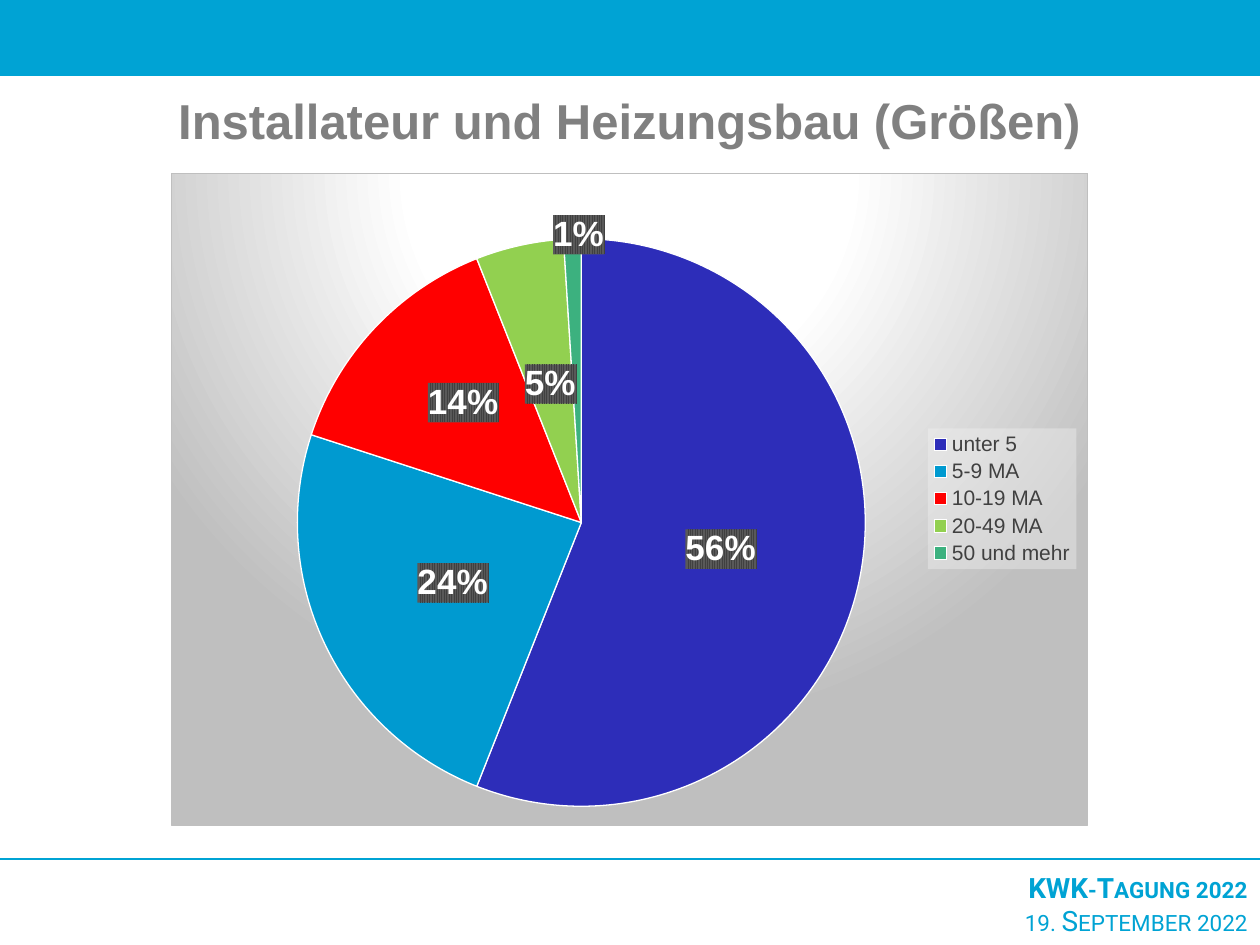
import copy

import lxml.etree
import pptx
import pptx.chart.data
import pptx.dml.color
import pptx.enum.chart
import pptx.enum.shapes
import pptx.enum.text
import pptx.oxml
import pptx.oxml.ns
import pptx.util

EMU_PER_PX = 914400 // 126
NAMESPACES = pptx.oxml.ns.nsdecls("c", "a")
CHART_WIDTH, CHART_HEIGHT = 917, 653

SLICES = [
    ("unter 5", 56, "2D2DB9"),
    ("5-9 MA", 24, "009AD0"),
    ("10-19 MA", 14, "FF0000"),
    ("20-49 MA", 5, "92D050"),
    ("50 und mehr", 1, "3CB17F"),
]
LABEL_OFFSETS = {2: (-15, -23), 4: (2, -146)}


def px(length):
    return pptx.util.Emu(length * EMU_PER_PX)


def color(value):
    return pptx.dml.color.RGBColor.from_string(value)


def qn(tag):
    return pptx.oxml.ns.qn(tag)


def element(tag, content):
    return pptx.oxml.parse_xml(f"<{tag} {NAMESPACES}>{content}</{tag}>")


def solid(value, alpha=100):
    return (f'<a:solidFill><a:srgbClr val="{value}">'
            f'<a:alpha val="{alpha * 1000}"/></a:srgbClr></a:solidFill>')


def layout(left, top, width=None, height=None, inner=False):
    content = '<c:layoutTarget val="inner"/>' if inner else ""
    if width:
        content += '<c:xMode val="edge"/><c:yMode val="edge"/>'
    sizes = zip("xywh", (left, top, width, height), (CHART_WIDTH, CHART_HEIGHT) * 2)
    for name, length, whole in sizes:
        if length is not None:
            content += f'<c:{name} val="{length / whole:.3f}"/>'
    return element("c:layout", f"<c:manualLayout>{content}</c:manualLayout>")


def replace_layout(parent, new_layout, position):
    for old in parent.findall(qn("c:layout")):
        parent.remove(old)
    parent.insert(position, new_layout)


class SlideBuilder:
    accent = "00A3D4"
    gray = "808080"

    def __init__(self, deck):
        self.slide = deck.slides.add_slide(deck.slide_layouts[6])

    def bar(self, left, top, width, height):
        bar = self.slide.shapes.add_shape(
            pptx.enum.shapes.MSO_SHAPE.RECTANGLE, px(left), px(top), px(width), px(height))
        bar.shadow.inherit = False
        bar.fill.solid()
        bar.fill.fore_color.rgb = color(self.accent)
        bar.line.fill.background()

    def rule(self, left, top, right):
        rule = self.slide.shapes.add_connector(
            pptx.enum.shapes.MSO_CONNECTOR.STRAIGHT, px(left), px(top), px(right), px(top))
        rule.line.color.rgb = color(self.accent)
        rule.line.width = pptx.util.Pt(1)
        lxml.etree.SubElement(rule._element.spPr, qn("a:effectLst"))

    def text(self, left, top, width, height, lines, size, font, value, align, small_caps=False):
        box = self.slide.shapes.add_textbox(px(left), px(top), px(width), px(height))
        frame = box.text_frame
        frame.word_wrap = True
        frame.text = "\n".join(line for line, bold in lines)
        for para, (line, bold) in zip(frame.paragraphs, lines):
            para.alignment = align
            span = para.runs[0]
            span.font.size = pptx.util.Pt(size)
            span.font.name = font
            span.font.bold = bold
            span.font.color.rgb = color(value)
            if small_caps:
                span._r.get_or_add_rPr().set("cap", "small")

    def pie(self, left, top, slices):
        data = pptx.chart.data.CategoryChartData()
        data.categories = [name for name, share, value in slices]
        data.add_series("Series 1", [share for name, share, value in slices])
        chart = self.slide.shapes.add_chart(
            pptx.enum.chart.XL_CHART_TYPE.PIE, px(left), px(top),
            px(CHART_WIDTH), px(CHART_HEIGHT), data).chart
        chart.has_title = False
        chart.font.size = pptx.util.Pt(10)
        chart.font.name = "Arial"
        chart.font.color.rgb = color("000000")
        plot = chart.plots[0]
        plot.vary_by_categories = True
        for index, (name, share, value) in enumerate(slices):
            part = plot.series[0].points[index].format
            part.fill.solid()
            part.fill.fore_color.rgb = color(value)
            part.line.color.rgb = color("FFFFFF")
            part.line.width = pptx.util.Pt(0.75)
        self.background(chart)
        self.legend(chart)
        self.labels(plot.series[0])
        plot_area = chart._chartSpace.chart.plotArea
        replace_layout(plot_area, layout(126, 65, 569, 569, inner=True), 0)

    def background(self, chart):
        stops = "".join(
            f'<a:gs pos="{place * 1000}"><a:srgbClr val="{value}"/></a:gs>'
            for place, value in [(0, "FFFFFF"), (39, "FFFFFF"), (100, "BFBFBF")])
        gradient = (f'<a:gradFill><a:gsLst>{stops}</a:gsLst><a:path path="circle">'
                    '<a:fillToRect l="50000" t="-80000" r="50000" b="180000"/>'
                    '</a:path></a:gradFill>')
        border = f'<a:ln w="9525">{solid("BFBFBF")}</a:ln>'
        chart._chartSpace.chart.addnext(element("c:spPr", gradient + border))

    def legend(self, chart):
        chart.has_legend = True
        legend = chart.legend
        legend.position = pptx.enum.chart.XL_LEGEND_POSITION.RIGHT
        legend.include_in_layout = False
        legend.font.size = pptx.util.Pt(12)
        legend.font.name = "Arial"
        legend.font.color.rgb = color("404040")
        replace_layout(legend._element, layout(757, 255, 149, 141), 1)
        overlay = legend._element.find(qn("c:overlay"))
        overlay.addnext(element("c:spPr", solid("F2F2F2", 40)))

    def labels(self, series):
        labels = series.data_labels
        labels.show_percentage = True
        labels.show_value = False
        labels.number_format = "0%"
        labels.number_format_is_linked = False
        labels.position = pptx.enum.chart.XL_LABEL_POSITION.CENTER
        labels.font.size = pptx.util.Pt(20)
        labels.font.name = "Arial"
        labels.font.bold = True
        labels.font.color.rgb = color("FFFFFF")
        holder = labels._element
        pattern = ('<a:pattFill prst="narVert"><a:fgClr><a:srgbClr val="404040"/></a:fgClr>'
                   '<a:bgClr><a:srgbClr val="595959"/></a:bgClr></a:pattFill>')
        holder.find(qn("c:txPr")).addprevious(element("c:spPr", pattern))
        shared = [copy.deepcopy(child) for child in holder
                  if child.tag != qn("c:showLeaderLines")]
        for position, (index, offset) in enumerate(LABEL_OFFSETS.items()):
            label = element("c:dLbl", f'<c:idx val="{index}"/>')
            label.append(layout(*offset))
            label.extend(copy.deepcopy(shared))
            holder.insert(position, label)


def main():
    deck = pptx.Presentation()
    deck.slide_width = pptx.util.Inches(10)
    deck.slide_height = pptx.util.Inches(7.5)
    page = SlideBuilder(deck)
    align = pptx.enum.text.PP_ALIGN
    page.text(785, 864, 475, 81, [("KWK-Tagung 2022", True), ("19. September 2022", False)],
              16, "Roboto", page.accent, align.RIGHT, small_caps=True)
    page.bar(-1, 0, 1261, 76)
    page.rule(0, 859, 1260)
    page.text(137, 84, 985, 72, [("Installateur und Heizungsbau (Größen)", True)],
              28, "Arial", page.gray, align.CENTER)
    page.pie(171, 173, SLICES)
    deck.save("out.pptx")


if __name__ == "__main__":
    main()
